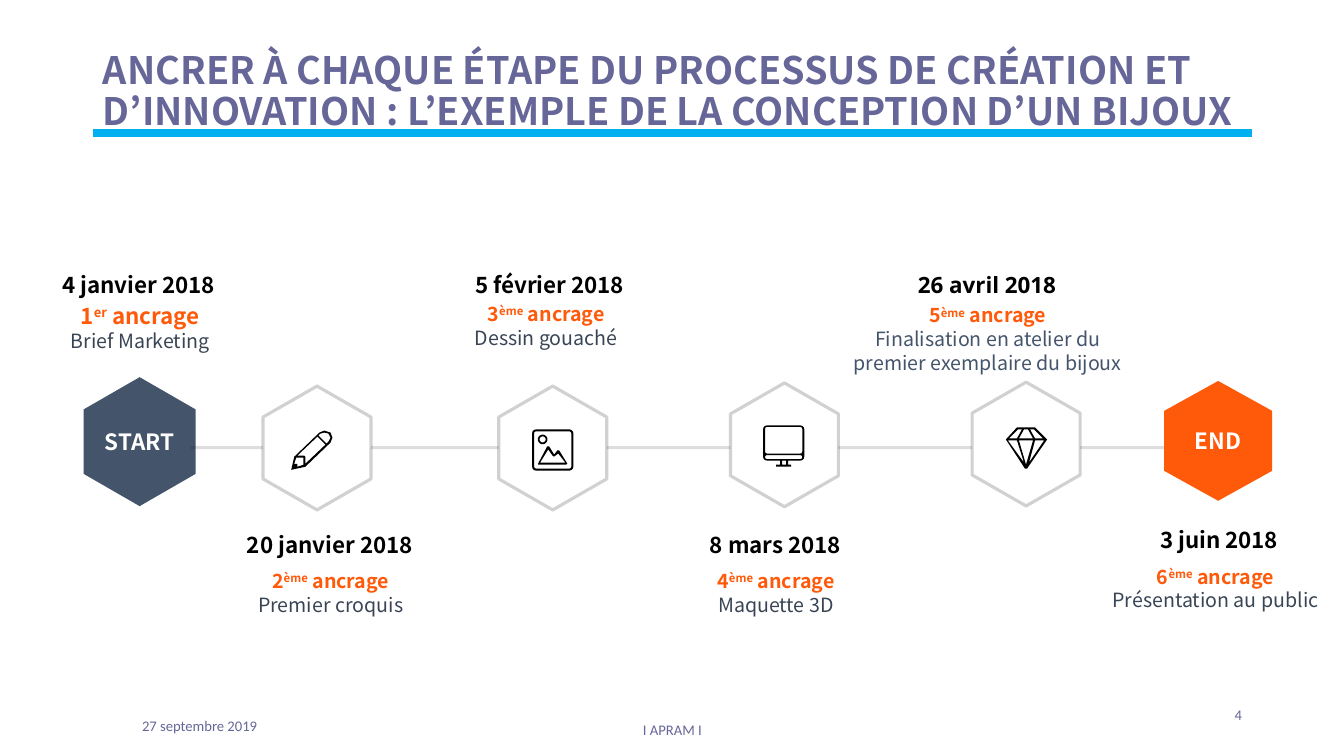
import math
from dataclasses import dataclass

from lxml import etree
from pptx import Presentation
from pptx.dml.color import RGBColor
from pptx.enum.shapes import MSO_CONNECTOR
from pptx.enum.text import MSO_ANCHOR, PP_ALIGN
from pptx.oxml.ns import qn
from pptx.util import Cm, Pt

LEFT, CENTER, RIGHT = PP_ALIGN.LEFT, PP_ALIGN.CENTER, PP_ALIGN.RIGHT
TOP, MIDDLE = MSO_ANCHOR.TOP, MSO_ANCHOR.MIDDLE
STRAIGHT = MSO_CONNECTOR.STRAIGHT

MAIN_FONT, DATE_FONT, FOOTER_FONT = "Noto Sans CJK KR", "Open Sans", "Calibri"
PURPLE, CYAN, ORANGE, SLATE = "666699", "00B0F0", "FF590A", "44546A"
DARK, INK, BLACK, WHITE = "394555", "1F1C1B", "000000", "FFFFFF"
ICON_UNIT = 1.04 / 41
DATE_WIDTH = 5.51

Point = tuple[float, float]
Contour = list[Point]


@dataclass(frozen=True)
class Milestone:
    date: str
    rank: str
    suffix: str
    detail: str
    date_left: float
    date_top: float
    detail_left: float
    detail_top: float
    detail_width: float = 5.03
    rank_size: float = 14
    date_font: str = MAIN_FONT
    detail_color: str = DARK


@dataclass(frozen=True)
class Hexagon:
    x: float
    y: float
    width: float = 2.72
    height: float = 3.12
    fill: str = WHITE
    outlined: bool = True
    label: str = ""


@dataclass(frozen=True)
class Icon:
    left: float
    top: float
    contours: list[Contour]


@dataclass(frozen=True)
class Footer:
    text: str
    left: float
    top: float
    width: float
    align: PP_ALIGN


def arc(x: float, y: float, radius: float, start: int, end: int, step: int) -> Contour:
    return [(x + radius * math.cos(math.radians(angle)), y + radius * math.sin(math.radians(angle)))
            for angle in range(start, end + 1, step)]


def circle(x: float, y: float, radius: float) -> Contour:
    return arc(x, y, radius, 0, 345, 15)


def rounded(left: float, top: float, right: float, bottom: float, radius: float) -> Contour:
    corners = [(right - radius, bottom - radius), (left + radius, bottom - radius),
               (left + radius, top + radius), (right - radius, top + radius)]
    return [point for turn, (x, y) in enumerate(corners)
            for point in arc(x, y, radius, 90 * turn, 90 * turn + 90, 30)]


MILESTONES = [
    Milestone("4 janvier 2018", "1", "er", "Brief Marketing", 0.74, 6.71, 1.02, 7.49, rank_size=16),
    Milestone("20 janvier 2018", "2", "ème", "Premier croquis", 5.56, 13.26, 5.82, 14.22),
    Milestone("5 février 2018", "3", "ème", "Dessin gouaché", 11.1, 6.71, 11.25, 7.49),
    Milestone("8 mars 2018", "4", "ème", "Maquette 3D", 16.79, 13.26, 17.04, 14.22),
    Milestone("26 avril 2018", "5", "ème", "Finalisation en atelier du premier exemplaire du bijoux",
              22.12, 6.71, 21.44, 7.52, 6.91, date_font=DATE_FONT, detail_color=SLATE),
    Milestone("3 juin 2018", "6", "ème", "Présentation au public", 27.97, 13.13, 28.02, 14.1, 5.23),
]
ENDS = [Hexagon(3.52, 11.13, 2.82, 3.25, SLATE, False, "START"),
        Hexagon(30.7, 11.11, 2.72, 3.02, ORANGE, False, "END")]
STEPS = [Hexagon(7.99, 11.29), Hexagon(13.93, 11.29), Hexagon(19.77, 11.21), Hexagon(25.86, 11.19)]
PENCIL = Icon(7.34, 10.85, [
    [(33, 0), (28, 2), (3, 26), (0, 39), (14, 36), (39, 12), (41, 7), (39, 2)],
    [(37, 11), (35, 13), (27, 5), (29, 3), (33, 2), (37, 3), (39, 7)],
    [(14, 33), (14, 26), (13, 25), (6, 25), (26, 6), (34, 14)],
    [(12, 34), (6, 36), (6, 33), (3, 33), (5, 27), (12, 27)],
])
DRAWING = Icon(13.41, 10.82, [
    rounded(0, 0, 41, 41, 4), rounded(2, 2, 39, 39, 2),
    [(6, 35), (6, 34), (15, 17), (17, 17), (22, 25), (25, 21), (27, 21), (35, 34), (34, 35)],
    [(8, 33), (16, 20), (21, 27), (22, 27), (26, 24), (33, 33)],
    circle(10.5, 10, 4.75), circle(10.5, 10, 3),
])
SCREEN = Icon(19.23, 10.72, [
    rounded(0, 0, 41, 35, 4), rounded(2, 1.5, 39, 28, 2), rounded(2, 29.5, 39, 33.5, 2),
    [(17, 35), (25, 35), (25, 39), (28, 39), (28, 41), (13, 41), (13, 39), (17, 39)],
    [(19, 35), (23, 35), (23, 39), (19, 39)],
])
DIAMOND = Icon(25.35, 10.77, [
    [(0, 12), (11, 0), (29, 0), (41, 12), (21, 41), (19, 41)],
    [(23, 35), (29, 13), (38, 13)], [(20, 37), (13, 13), (27, 13)], [(2, 13), (11, 13), (18, 35)],
    [(12, 2), (16, 2), (11, 11), (3, 11)], [(18, 2), (22, 2), (27, 11), (13, 11)],
    [(24, 2), (28, 2), (37, 11), (29, 11)],
])
FOOTERS = [Footer("4", 23.93, 17.65, 7.62, RIGHT),
           Footer("27 septembre 2019", 3.33, 17.93, 7.62, LEFT),
           Footer("I APRAM I", 11.23, 18.03, 11.43, CENTER)]


def rgb(color: str) -> RGBColor:
    return RGBColor.from_string(color)


def add_span(para, text: str, *, size: float, color: str, bold: bool = False,
             font: str = MAIN_FONT, raised: bool = False) -> None:
    span = para.add_run()
    span.text = text
    span.font.name, span.font.size, span.font.bold = font, Pt(size), bold
    span.font.color.rgb = rgb(color)
    if raised:
        span.font._element.set("baseline", "30000")


def add_box(slide, left: float, top: float, width: float, height: float, *,
            align: PP_ALIGN = CENTER, side: float = 0, anchor: MSO_ANCHOR = TOP, wrap: bool = True):
    frame = slide.shapes.add_textbox(Cm(left), Cm(top), Cm(width), Cm(height)).text_frame
    frame.word_wrap, frame.vertical_anchor = wrap, anchor
    frame.margin_left = frame.margin_right = Cm(side)
    frame.paragraphs[0].alignment = align
    return frame


def style_line(line, color: str, width: float, opacity: int = 100) -> None:
    line.color.rgb, line.width = rgb(color), Pt(width)
    if opacity < 100:
        fill = line._ln.find(qn("a:solidFill"))
        etree.SubElement(fill[0], qn("a:alpha")).set("val", str(opacity * 1000))


def add_rule(slide, start: Point, end: Point, color: str, width: float, opacity: int = 100) -> None:
    rule = slide.shapes.add_connector(STRAIGHT, *(Cm(value) for value in (*start, *end)))
    style_line(rule.line, color, width, opacity)
    etree.SubElement(rule._element.spPr, qn("a:effectLst"))


def add_outline(slide, contours: list[Contour], fill: str):
    placed = [[(Cm(x), Cm(y)) for x, y in contour] for contour in contours]
    builder = slide.shapes.build_freeform(*placed[0][0], scale=1.0)
    for index, contour in enumerate(placed):
        if index:
            builder.move_to(*contour[0])
        builder.add_line_segments(contour[1:], close=True)
    shape = builder.convert_to_shape()
    shape.shadow.inherit = False
    shape.fill.solid()
    shape.fill.fore_color.rgb = rgb(fill)
    shape.line.fill.background()
    return shape


def add_hexagon(slide, item: Hexagon) -> None:
    half, quarter = item.width / 2, item.height / 4
    corners = [(0, -2), (1, -1), (1, 1), (0, 2), (-1, 1), (-1, -1)]
    shape = add_outline(slide, [[(item.x + half * x, item.y + quarter * y) for x, y in corners]], item.fill)
    if item.outlined:
        style_line(shape.line, INK, 2.25, 20)
    if item.label:
        frame = add_box(slide, item.x - 0.92, item.y - 0.52, 1.84, 1.04, anchor=MIDDLE, wrap=False)
        add_span(frame.paragraphs[0], item.label, size=16, color=WHITE, bold=True)


def add_icon(slide, icon: Icon) -> None:
    add_outline(slide, [[(icon.left + ICON_UNIT * x, icon.top + ICON_UNIT * y) for x, y in contour]
                        for contour in icon.contours], BLACK)


def add_milestone(slide, item: Milestone) -> None:
    frame = add_box(slide, item.date_left, item.date_top, DATE_WIDTH, 1.27)
    add_span(frame.paragraphs[0], item.date, size=16, color=BLACK, bold=True, font=item.date_font)
    frame = add_box(slide, item.detail_left, item.detail_top, item.detail_width, 2.39)
    for text, raised in ((item.rank, False), (item.suffix, True), (" ancrage", False)):
        add_span(frame.paragraphs[0], text, size=item.rank_size, color=ORANGE, bold=True, raised=raised)
    para = frame.add_paragraph()
    para.alignment = CENTER
    add_span(para, item.detail, size=14, color=item.detail_color)


def add_title(slide, text: str) -> None:
    title = slide.shapes.title
    title.left, title.top, title.width, title.height = Cm(2.34), Cm(1.17), Cm(29.21), Cm(2.24)
    title.text_frame.vertical_anchor = TOP
    para = title.text_frame.paragraphs[0]
    para.alignment, para.line_spacing = LEFT, 0.9
    add_span(para, text, size=27, color=PURPLE, bold=True)


def main() -> None:
    deck = Presentation()
    deck.slide_width, deck.slide_height = Cm(33.87), Cm(19.05)
    slide = deck.slides.add_slide(deck.slide_layouts[5])
    add_rule(slide, (2.34, 3.35), (31.55, 3.35), CYAN, 6)
    add_title(slide, "ANCRER À CHAQUE ÉTAPE DU PROCESSUS DE CRÉATION ET D’INNOVATION : "
                     "L’EXEMPLE DE LA CONCEPTION D’UN BIJOUX")
    for milestone in MILESTONES:
        add_milestone(slide, milestone)
    for hexagon in ENDS:
        add_hexagon(slide, hexagon)
    add_rule(slide, (29.34, 11.28), (4.8, 11.28), INK, 2.25, 15)
    for hexagon, icon in zip(STEPS, (PENCIL, DRAWING, SCREEN, DIAMOND)):
        add_hexagon(slide, hexagon)
        add_icon(slide, icon)
    for footer in FOOTERS:
        frame = add_box(slide, footer.left, footer.top, footer.width, 1.02, align=footer.align, side=0.25)
        add_span(frame.paragraphs[0], footer.text, size=10.5, color=PURPLE, font=FOOTER_FONT)
    deck.save("out.pptx")


if __name__ == "__main__":
    main()
